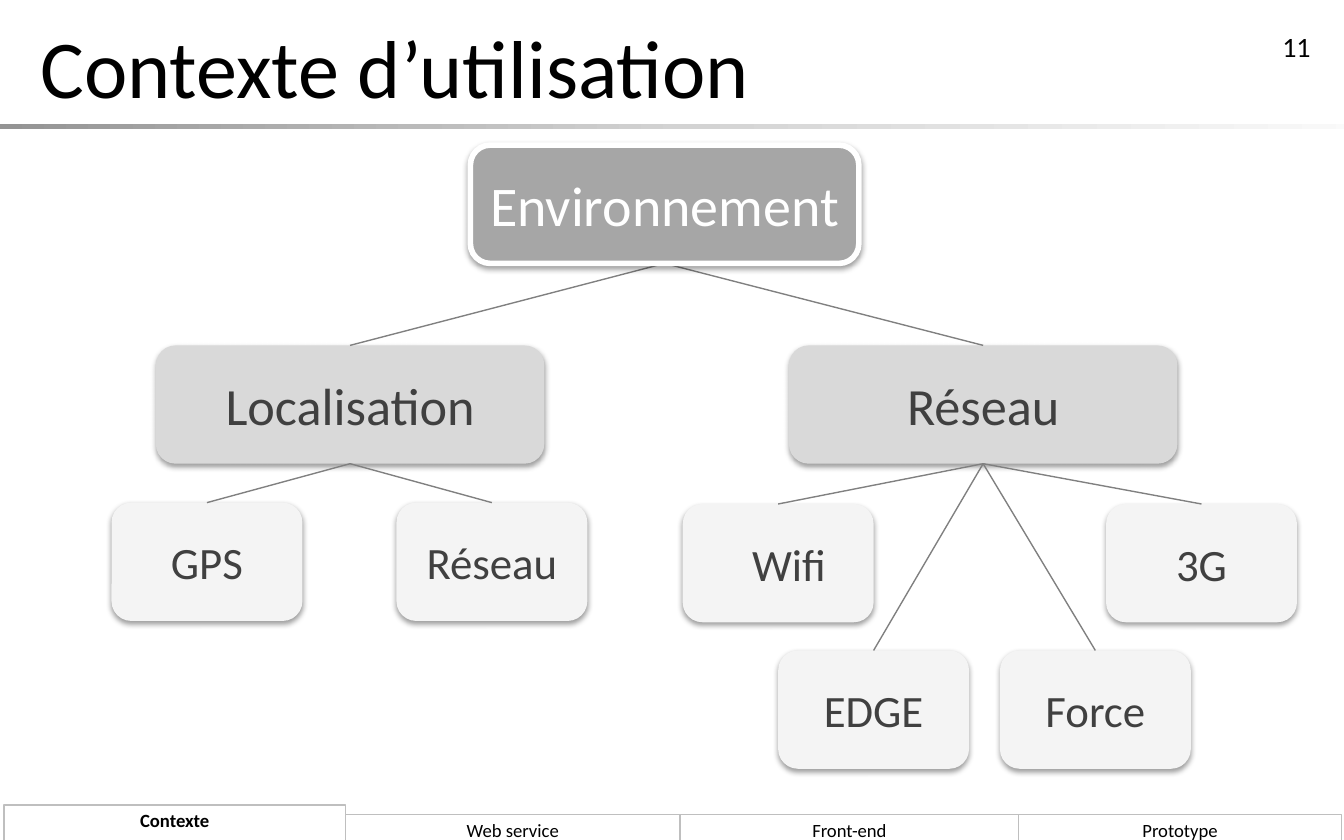
from copy import deepcopy

from lxml.etree import SubElement
from pptx import Presentation
from pptx.dml.color import RGBColor
from pptx.enum.shapes import MSO_CONNECTOR, MSO_SHAPE
from pptx.enum.text import MSO_ANCHOR, PP_ALIGN
from pptx.oxml.ns import qn
from pptx.util import Inches, Pt


def color(hex_text):
    return RGBColor.from_string(hex_text)


def write(frame, text, size=24, fill="000000", bold=False, align=PP_ALIGN.CENTER,
          anchor=MSO_ANCHOR.MIDDLE, margins=(0.1, 0.05, 0.1, 0.05), wrap=True):
    """Fill a text frame with one formatted paragraph."""
    frame.word_wrap = wrap
    frame.vertical_anchor = anchor
    (frame.margin_left, frame.margin_top,
     frame.margin_right, frame.margin_bottom) = map(Inches, margins)
    para = frame.paragraphs[0]
    para.alignment = align
    span = para.add_run()
    span.text = text
    span.font.name = "Calibri"
    span.font.size = Pt(size)
    span.font.bold = bold
    span.font.color.rgb = color(fill)


class TreeSlide:
    node_height = 0.88
    # level: (width, text size, fill, text colour)
    levels = {
        "root": (2.89, 30, "A6A6A6", "FFFFFF"),
        "branch": (2.89, 28, "D9D9D9", "404040"),
        "leaf": (1.42, 24, "F4F4F4", "404040"),
    }

    def __init__(self, page):
        self.page = page

    def shape(self, kind, left, top, width, height, fill=None, line=None, weight=0.75):
        box = self.page.shapes.add_shape(
            kind, Inches(left), Inches(top), Inches(width), Inches(height))
        box.shadow.inherit = False
        if fill:
            box.fill.solid()
            box.fill.fore_color.rgb = color(fill)
        if line:
            box.line.color.rgb = color(line)
            box.line.width = Pt(weight)
        else:
            box.line.fill.background()
        return box

    def title(self, text):
        box = self.page.shapes.title
        box.left, box.top, box.width, box.height = map(Inches, (0.2, 0.05, 9.29, 0.87))
        write(box.text_frame, text, size=44, align=PP_ALIGN.LEFT)

    def page_number(self, text):
        box = self.page.shapes.add_textbox(
            Inches(7.52), Inches(0.17), Inches(2.33), Inches(0.33))
        write(box.text_frame, text, size=15, align=PP_ALIGN.RIGHT, anchor=MSO_ANCHOR.TOP)

    def gradient_rule(self, colors):
        bar = self.shape(MSO_SHAPE.RECTANGLE, 0, 0.92, 10.2, 0.04)
        bar.fill.gradient()
        bar.fill.gradient_angle = 0
        # The default gradient has two stops; a third goes between them
        stop_list = bar.element.spPr.find(".//" + qn("a:gsLst"))
        stop_list.insert(1, deepcopy(stop_list[0]))
        for index, stop in enumerate(bar.fill.gradient_stops):
            stop.position = index / (len(colors) - 1)
            stop.color.rgb = color(colors[index])

    def tab(self, text, left, width, active=False):
        top, height = (5.99, 0.42) if active else (6.06, 0.25)
        box = self.shape(MSO_SHAPE.RECTANGLE, left, top, width, height, "FFFFFF", "BFBFBF")
        write(box.text_frame, text, size=10, bold=active, anchor=MSO_ANCHOR.TOP,
              margins=(0.1, 0.03, 0.1, 0.05))

    def node(self, text, level, left, top, shift=0.0):
        width, size, fill, text_color = self.levels[level]
        box = self.shape(MSO_SHAPE.ROUNDED_RECTANGLE, left, top, width, self.node_height,
                         fill, "FFFFFF" if level == "root" else None, 3)
        self.drop_shadow(box)
        write(box.text_frame, text, size=size, fill=text_color, wrap=False,
              margins=(0.03 + 2 * shift, 0.03, 0.03, 0.03))
        return box

    def drop_shadow(self, box):
        effects = box.element.spPr.find(qn("a:effectLst"))
        shadow = SubElement(effects, qn("a:outerShdw"), blurRad=str(Pt(3.1)),
                            dist=str(Pt(1.6)), dir="5400000", rotWithShape="0")
        tone = SubElement(shadow, qn("a:srgbClr"), val="000000")
        SubElement(tone, qn("a:alpha"), val="38000")

    def link(self, child, parent):
        line = self.page.shapes.add_connector(MSO_CONNECTOR.STRAIGHT, 0, 0, 0, 0)
        line.begin_connect(child, 0)
        line.end_connect(parent, 2)
        line.line.color.rgb = color("808080")
        line.line.width = Pt(0.75)
        SubElement(line.element.spPr, qn("a:effectLst"))


def main():
    deck = Presentation()
    deck.slide_width, deck.slide_height = Inches(10), Inches(6.25)
    slide = TreeSlide(deck.slides.add_slide(deck.slide_layouts[5]))

    # Header
    slide.gradient_rule(["949494", "D3D3D3", "FAFAFA"])
    slide.title("Contexte d’utilisation")
    slide.page_number("11")

    # Navigation tabs
    left = 0.03
    for name, width in (("Contexte", 2.54), ("Web service", 2.49),
                        ("Front-end", 2.52), ("Prototype", 2.4)):
        slide.tab(name, left, width, active=name == "Contexte")
        left += width

    # Tree: each branch with its leaves as (text, left, top, text shift)
    tree = (
        ("Localisation", 1.16, (("GPS", 0.83, 3.74, 0), ("Réseau", 2.95, 3.74, 0))),
        ("Réseau", 5.87, (("Wifi", 5.08, 3.75, 0.08), ("3G", 8.23, 3.75, 0),
                          ("EDGE", 5.79, 4.84, 0), ("Force", 7.44, 4.84, 0))),
    )
    root = slide.node("Environnement", "root", 3.5, 1.08)
    links = []
    for name, left, leaves in tree:
        branch = slide.node(name, "branch", left, 2.57)
        links.append((branch, root))
        for text, leaf_left, top, shift in leaves:
            links.append((slide.node(text, "leaf", leaf_left, top, shift), branch))
    for child, parent in links:
        slide.link(child, parent)

    # The root covers the ends of its connectors
    root.element.getparent().append(root.element)

    deck.save("out.pptx")


if __name__ == "__main__":
    main()
